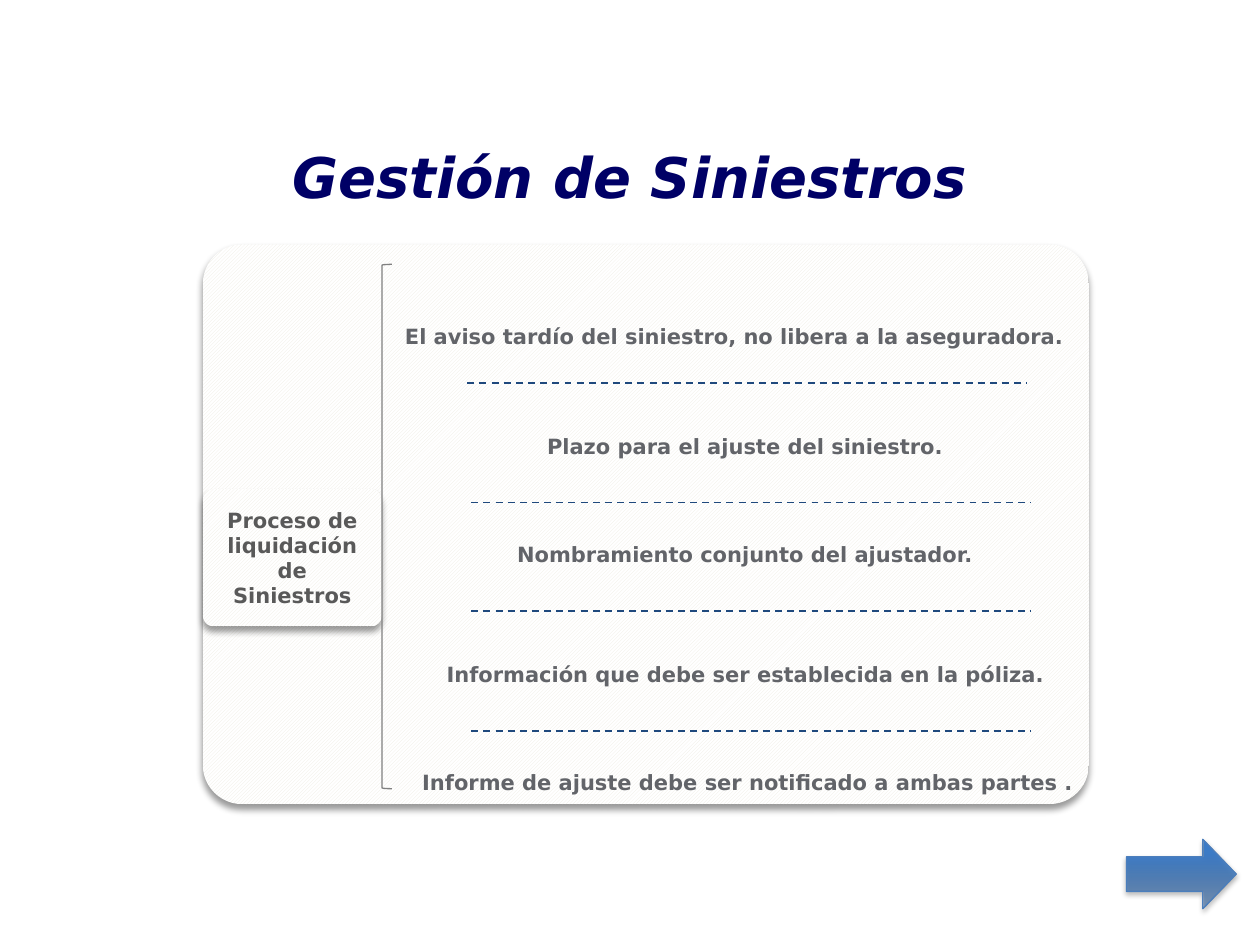
from copy import deepcopy

from pptx import Presentation
from pptx.dml.color import RGBColor
from pptx.enum.dml import MSO_LINE, MSO_PATTERN
from pptx.enum.shapes import MSO_CONNECTOR, MSO_SHAPE
from pptx.enum.text import MSO_ANCHOR, MSO_AUTO_SIZE, PP_ALIGN
from pptx.oxml.ns import qn
from pptx.util import Cm, Pt
from lxml.etree import SubElement

NAVY = RGBColor(0x00, 0x00, 0x66)
BLUE = RGBColor(0x1F, 0x49, 0x7D)
CREAM = RGBColor(0xEE, 0xEC, 0xE1)
WHITE = RGBColor(0xFF, 0xFF, 0xFF)
GREY = RGBColor(0x80, 0x80, 0x80)
SLATE = RGBColor(0x62, 0x64, 0x69)
DARK = RGBColor(0x59, 0x59, 0x59)
EDGE = RGBColor(0x4B, 0x7E, 0xBC)
DEEP = RGBColor(0x2F, 0x5F, 0x99)
MID = RGBColor(0x3D, 0x7C, 0xC7)
LIGHT = RGBColor(0x3A, 0x7C, 0xCB)


def style(para, size, color):
    para.alignment = PP_ALIGN.CENTER
    font = para.font
    font.name, font.size, font.bold = "DejaVu Sans", Pt(size), True
    font.color.rgb = color


def shade(shape, alpha, blur, dist):
    """Give the shape a black shadow that falls straight down."""
    shape.shadow.inherit = False
    effects = shape._element.spPr.find(qn("a:effectLst"))
    outer = SubElement(effects, qn("a:outerShdw"), blurRad=str(Pt(blur)),
                       dist=str(Pt(dist)), dir="5400000", rotWithShape="0")
    black = SubElement(outer, qn("a:srgbClr"), val="000000")
    SubElement(black, qn("a:alpha"), val=str(alpha * 1000))


deck = Presentation()
deck.slide_width, deck.slide_height = Cm(25.4), Cm(19.05)
slide = deck.slides.add_slide(deck.slide_layouts[5])
shapes = slide.shapes

# Title
title = shapes.title
title.left, title.top = Cm(1.27), Cm(1.96)
title.width, title.height = Cm(22.86), Cm(3.18)
title.text_frame.vertical_anchor = MSO_ANCHOR.MIDDLE
title.text_frame.text = "Gestión de Siniestros"
style(title.text_frame.paragraphs[0], 32, NAVY)
title.text_frame.paragraphs[0].font.italic = True

# Panel and the topic box on its left edge
cards = []
for top, width, height, round_ in [(4.93, 17.86, 11.28, 0.07),
                                   (9.86, 3.61, 2.77, 0.08)]:
    card = shapes.add_shape(MSO_SHAPE.ROUNDED_RECTANGLE, Cm(4.09), Cm(top),
                            Cm(width), Cm(height))
    card.adjustments[0] = round_
    card.fill.patterned()
    card.fill.pattern = MSO_PATTERN.DARK_UPWARD_DIAGONAL
    card.fill.fore_color.rgb = CREAM
    card.fill.back_color.rgb = WHITE
    card.line.fill.background()
    shade(card, 40, 4, 3)
    cards.append(card)

frame = cards[1].text_frame
frame.word_wrap = True
frame.vertical_anchor = MSO_ANCHOR.MIDDLE
frame.margin_left = frame.margin_right = Cm(0.25)
frame.margin_top = frame.margin_bottom = Cm(0.25)
frame.text = "Proceso de liquidación de Siniestros"
style(frame.paragraphs[0], 12, DARK)

brace = shapes.add_shape(MSO_SHAPE.LEFT_BRACKET, Cm(7.7), Cm(5.33),
                         Cm(0.2), Cm(10.57))
brace.shadow.inherit = False
brace.fill.background()
brace.line.color.rgb = GREY
brace.line.width = Pt(0.75)

# Points
points = [
    ("El aviso tardío del siniestro, no libera a la aseguradora.",
     7.92, 6.53, 13.77),
    ("Plazo para el ajuste del siniestro.", 10.92, 8.74, 8.2),
    ("Nombramiento conjunto del ajustador.", 10.36, 10.92, 9.32),
    ("Información que debe ser establecida en la póliza.",
     8.97, 13.34, 12.12),
    ("Informe de ajuste debe ser notificado a ambas partes .",
     8.46, 15.52, 13.23),
]
for text, left, top, width in points:
    box = shapes.add_textbox(Cm(left), Cm(top), Cm(width), Cm(0.51))
    frame = box.text_frame
    frame.word_wrap = False
    frame.auto_size = MSO_AUTO_SIZE.SHAPE_TO_FIT_TEXT
    frame.margin_left = frame.margin_right = 0
    frame.margin_top = frame.margin_bottom = 0
    frame.text = text
    style(frame.paragraphs[0], 12, SLATE)

# Dashed rules between the points
for left, top in [(9.42, 7.72), (9.5, 10.13), (9.5, 12.32), (9.5, 14.73)]:
    rule = shapes.add_connector(MSO_CONNECTOR.STRAIGHT, Cm(left), Cm(top),
                                Cm(left + 11.28), Cm(top))
    rule.line.color.rgb = BLUE
    rule.line.width = Pt(1)
    rule.line.dash_style = MSO_LINE.DASH
    SubElement(rule._element.spPr, qn("a:effectLst"))

# Arrow to the next slide
arrow = shapes.add_shape(MSO_SHAPE.RIGHT_ARROW, Cm(22.71), Cm(16.92),
                         Cm(2.21), Cm(1.4))
arrow.adjustments[1] = 0.48
arrow.line.color.rgb = EDGE
arrow.line.width = Pt(0.75)
arrow.fill.gradient()
arrow.fill.gradient_angle = 90
stops = arrow._element.spPr.find(".//" + qn("a:gsLst"))
stops.append(deepcopy(stops[-1]))
for stop, place, color in zip(arrow.fill.gradient_stops, (0, 0.8, 1),
                              (DEEP, MID, LIGHT)):
    stop.position = place
    stop.color.rgb = color
SubElement(stops[0][0], qn("a:alpha"), val="54000")
shade(arrow, 35, 3.1, 1.8)

deck.save("out.pptx")
